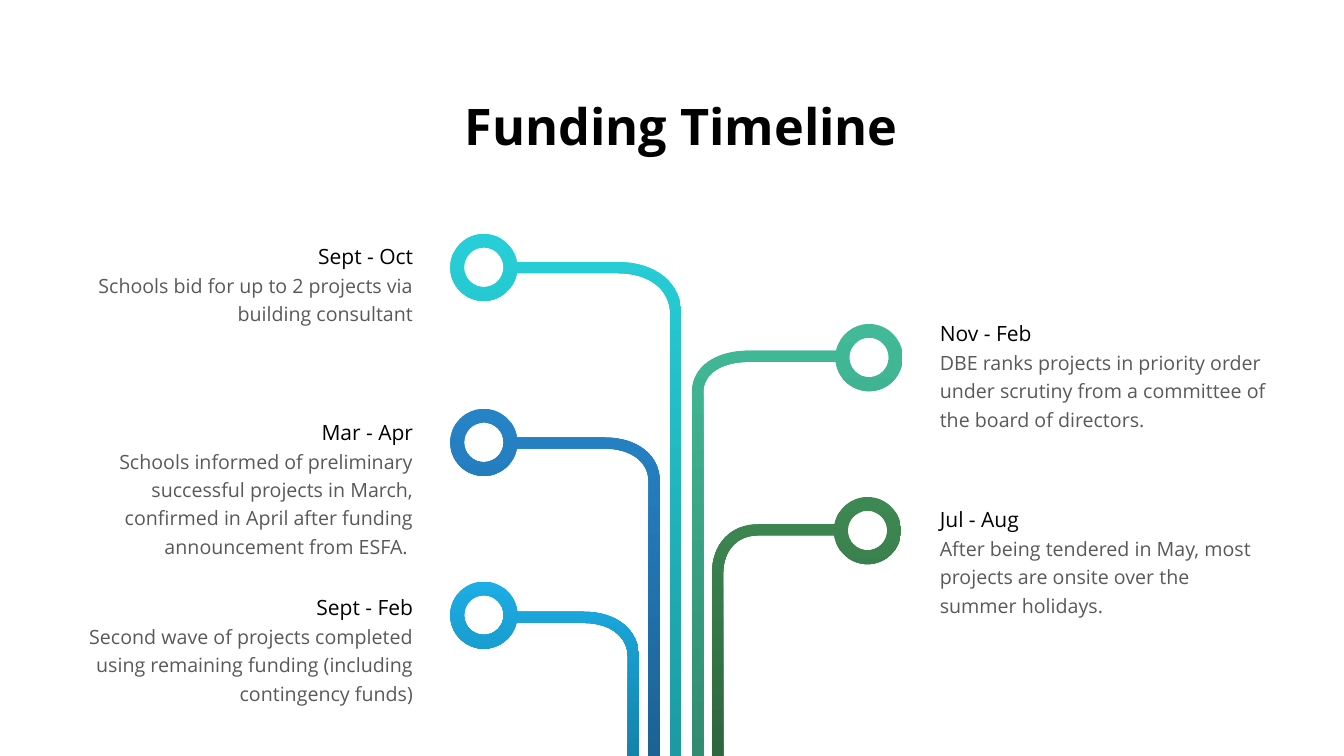
from math import asin, cos, pi, sin, tan
from pptx import Presentation
from pptx.dml.color import RGBColor as RGB
from pptx.enum.text import PP_ALIGN as Align
from pptx.oxml import parse_xml
from pptx.oxml.ns import nsdecls, qn
from pptx.util import Pt

BLACK = RGB(0x00, 0x00, 0x00)
GREY = RGB(0x59, 0x59, 0x59)
CYAN, TEAL = RGB(0x27, 0xCE, 0xD7), RGB(0x1D, 0x9A, 0xA1)
BLUE, NAVY = RGB(0x26, 0x83, 0xC6), RGB(0x1C, 0x62, 0x94)
SKY, OCEAN = RGB(0x1C, 0xAD, 0xE4), RGB(0x14, 0x82, 0xAB)
MINT, JADE = RGB(0x42, 0xBA, 0x97), RGB(0x31, 0x8B, 0x71)
LEAF, PINE = RGB(0x3E, 0x88, 0x53), RGB(0x2E, 0x66, 0x3E)

WIDTH, HEIGHT = 960, 540
LEFT_EDGE, RIGHT_EDGE = 302.2, 664.2

# ring centre, pipe height, bend start x and end y, stem x, colours
STEMS = [
    ((345.6, 191), 191.2, (441.4, 224.6), 482.8, (CYAN, TEAL)),
    ((345.6, 316), 316.5, (432, 344), 467.3, (BLUE, NAVY)),
    ((345.6, 439.4), 441, (417, 469.5), 452.5, (SKY, OCEAN)),
    ((620.8, 255.4), 254.5, (535, 280), 498.4, (MINT, JADE)),
    ((619.7, 379), 378.5, (541.5, 409.7), 512.6, (LEAF, PINE)),
]

# alignment, top, width, period, description
STAGES = [
    (Align.LEFT, 221.9, 248.4, "Nov - Feb",
     "DBE ranks projects in priority order under scrutiny from a "
     "committee of the board of directors."),
    (Align.LEFT, 354.8, 244.1, "Jul - Aug",
     "After being tendered in May, most projects are onsite over the "
     "summer holidays."),
    (Align.RIGHT, 166.9, 259.9, "Sept - Oct",
     "Schools bid for up to 2 projects via building consultant"),
    (Align.RIGHT, 292.4, 254.9, "Mar - Apr",
     "Schools informed of preliminary successful projects in March, "
     "confirmed in April after funding announcement from ESFA. "),
    (Align.RIGHT, 417.6, 254.9, "Sept - Feb",
     "Second wave of projects completed using remaining funding "
     "(including contingency funds)"),
]


def arc(centre, radius, side, angles):
    """A start point, then three curve points for each step in angle."""
    def spot(turn, slide=0):
        x = cos(turn) - slide * sin(turn)
        y = sin(turn) + slide * cos(turn)
        return centre[0] + side * radius * x, centre[1] + radius * y

    points = [spot(angles[0])]
    for a, b in zip(angles, angles[1:]):
        reach = 4 / 3 * tan((b - a) / 4)
        points += [spot(a, reach), spot(b, -reach), spot(b)]
    return points


def bend(start, end, pull=0.6):
    """Four points of a curve that leaves level and arrives upright."""
    (x0, y0), (x1, y1) = start, end
    return [start, (x0 + (x1 - x0) * pull, y0),
            (x1, y1 + (y0 - y1) * pull), end]


class Timeline:
    font = "Open Sans"
    ring, hole, half = 24, 14.1, 4

    def __init__(self, slide):
        self.shapes = slide.shapes

    def text(self, box, words, size, color, align, bold=None, spacing=None):
        frame = self.shapes.add_textbox(*map(Pt, box)).text_frame
        frame.word_wrap = True
        frame.text = words
        para = frame.paragraphs[0]
        para.alignment = align
        para.line_spacing = spacing
        font = para.runs[0].font
        font.name, font.size, font.bold = self.font, Pt(size), bold
        font.color.rgb = color

    def stage(self, align, top, width, period, words):
        left = RIGHT_EDGE if align == Align.LEFT else LEFT_EDGE - width
        self.text((left, top, width, 28.8), period, 15, BLACK, align,
                  spacing=1.2)
        self.text((left, top + 22, width, 51), words, 14, GREY, align,
                  spacing=1.2)

    def stem(self, centre, pipe, turn, x, colors):
        side = 1 if x > centre[0] else -1
        upper, lower = pipe - self.half, pipe + self.half
        outer, inner = x + side * self.half, x - side * self.half
        start = asin((lower - centre[1]) / self.ring)
        end = 2 * pi + asin((upper - centre[1]) / self.ring)
        edge = arc(centre, self.ring, side,
                   [start, pi / 2, pi, 3 * pi / 2, end])
        edge += [(turn[0], upper)] * 3
        edge += bend((turn[0], upper), (outer, turn[1]))[1:]
        for corner in (outer, HEIGHT), (inner, HEIGHT), (inner, turn[1]):
            edge += [corner] * 3
        edge += bend((turn[0], lower), (inner, turn[1]))[-2::-1]
        hole = arc(centre, self.hole, side,
                   [2 * pi, 3 * pi / 2, pi, pi / 2, 0])
        self.outline([edge, hole], colors)

    def outline(self, loops, colors):
        pen = None
        for loop in loops:
            first, *rest = [(Pt(x), Pt(y)) for x, y in loop]
            if pen is None:
                pen = self.shapes.build_freeform(*first)
            else:
                pen.move_to(*first)
            pen.add_line_segments(rest, close=True)
        shape = pen.convert_to_shape()
        self.curve(shape)
        shape.shadow.inherit = False
        shape.line.fill.background()
        shape.fill.gradient()
        shape.fill.gradient_angle = 270
        for stop, color in zip(shape.fill.gradient_stops, colors):
            stop.color.rgb = color

    def curve(self, shape):
        """Join each three line points into one cubic curve."""
        lines = list(shape._element.iter(qn("a:lnTo")))
        for i in range(0, len(lines), 3):
            cubic = parse_xml(f"<a:cubicBezTo {nsdecls('a')}/>")
            lines[i].addprevious(cubic)
            for line in lines[i:i + 3]:
                cubic.append(line[0])
                line.getparent().remove(line)


def main():
    deck = Presentation()
    deck.slide_width, deck.slide_height = Pt(WIDTH), Pt(HEIGHT)
    page = Timeline(deck.slides.add_slide(deck.slide_layouts[6]))
    page.text((218.9, 64.4, 535.7, 51), "Funding Timeline", 36, BLACK,
              Align.CENTER, bold=True)
    for stem in STEMS:
        page.stem(*stem)
    for stage in STAGES:
        page.stage(*stage)
    deck.save("out.pptx")


if __name__ == "__main__":
    main()
